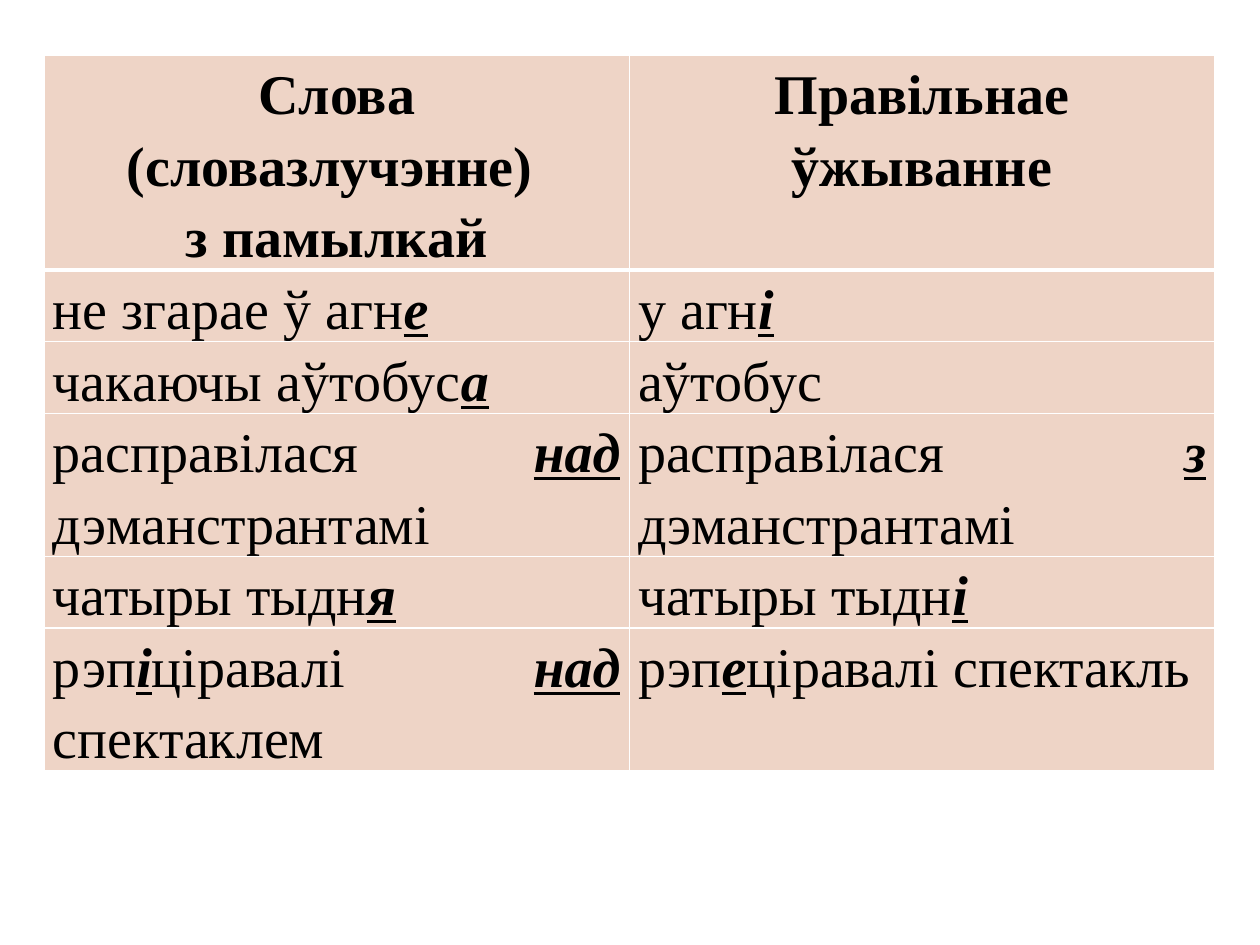
from pptx import Presentation
from pptx.dml.color import RGBColor
from pptx.enum.text import PP_ALIGN
from pptx.oxml.ns import qn
from pptx.util import Inches, Pt
from lxml import etree

CENTER, JUSTIFY = PP_ALIGN.CENTER, PP_ALIGN.JUSTIFY
BLACK = RGBColor(0x00, 0x00, 0x00)
WHITE = RGBColor(0xFF, 0xFF, 0xFF)
PEACH = RGBColor(0xEE, 0xD4, 0xC6)

# Asterisks enclose the letters to stress
HEAD = ["Слова (словазлучэнне) \nз памылкай", "Правільнае ўжыванне"]
ROWS = [
    ["не згарае ў агн*е*", "у агн*і*"],
    ["чакаючы аўтобус*а*", "аўтобус "],
    ["расправілася *над* дэманстрантамі", "расправілася *з* дэманстрантамі"],
    ["чатыры тыдн*я*", "чатыры тыдн*і*"],
    ["рэп*і*ціравалі *над* спектаклем", "рэп*е*ціравалі спектакль"],
]


def write(frame, text, font="Times New Roman", size=32, color=BLACK,
          bold=False, align=JUSTIFY, space=1.15):
    """Fill a text frame; odd pieces between asterisks are stressed."""
    for n, line in enumerate(text.split("\n")):
        para = frame.add_paragraph() if n else frame.paragraphs[0]
        para.alignment, para.line_spacing = align, space
        for k, piece in enumerate(line.split("*")):
            if not piece:
                continue
            run = para.add_run()
            run.text = piece
            stress = k % 2 == 1
            run.font.name, run.font.size = font, Pt(size)
            run.font.color.rgb = color
            run.font.bold = bold or stress
            run.font.italic = run.font.underline = stress


class Deck:
    fill, line = PEACH, WHITE

    def __init__(self, prs):
        self.slide = prs.slides.add_slide(prs.slide_layouts[6])

    def border(self, cell, side, width):
        props = cell._tc.get_or_add_tcPr()
        edge = etree.SubElement(props, qn("a:" + side), w=str(Pt(width)))
        paint = etree.SubElement(edge, qn("a:solidFill"))
        etree.SubElement(paint, qn("a:srgbClr"), val=str(self.line))

    def cell(self, cell, text, top=1, bottom=1, **style):
        cell.margin_left = cell.margin_right = Inches(0.07)
        cell.margin_top = cell.margin_bottom = 0
        # Borders come before the fill in the cell properties
        for side, width in (("lnL", 1), ("lnR", 1), ("lnT", top), ("lnB", bottom)):
            self.border(cell, side, width)
        cell.fill.solid()
        cell.fill.fore_color.rgb = self.fill
        write(cell.text_frame, text, **style)

    def table(self, head, rows, left, top, width, height, row):
        frame = self.slide.shapes.add_table(
            len(rows) + 1, len(head), left, top, width, height)
        grid = frame.table
        for line in grid.rows:
            line.height = row
        frame.height = height
        for c, text in enumerate(head):
            self.cell(grid.cell(0, c), text, bottom=3, bold=True, align=CENTER)
        for r, texts in enumerate(rows, 1):
            for c, text in enumerate(texts):
                self.cell(grid.cell(r, c), text, top=3 if r == 1 else 1)


def main():
    prs = Presentation()
    prs.slide_width, prs.slide_height = Inches(10), Inches(7.5)
    deck = Deck(prs)
    # Table of mistakes and correct usage; rows grow with their text
    deck.table(HEAD, ROWS, Inches(0.35), Inches(0.44),
               Inches(9.29), Inches(6.13), row=Inches(0.41))
    prs.save("out.pptx")


if __name__ == "__main__":
    main()
